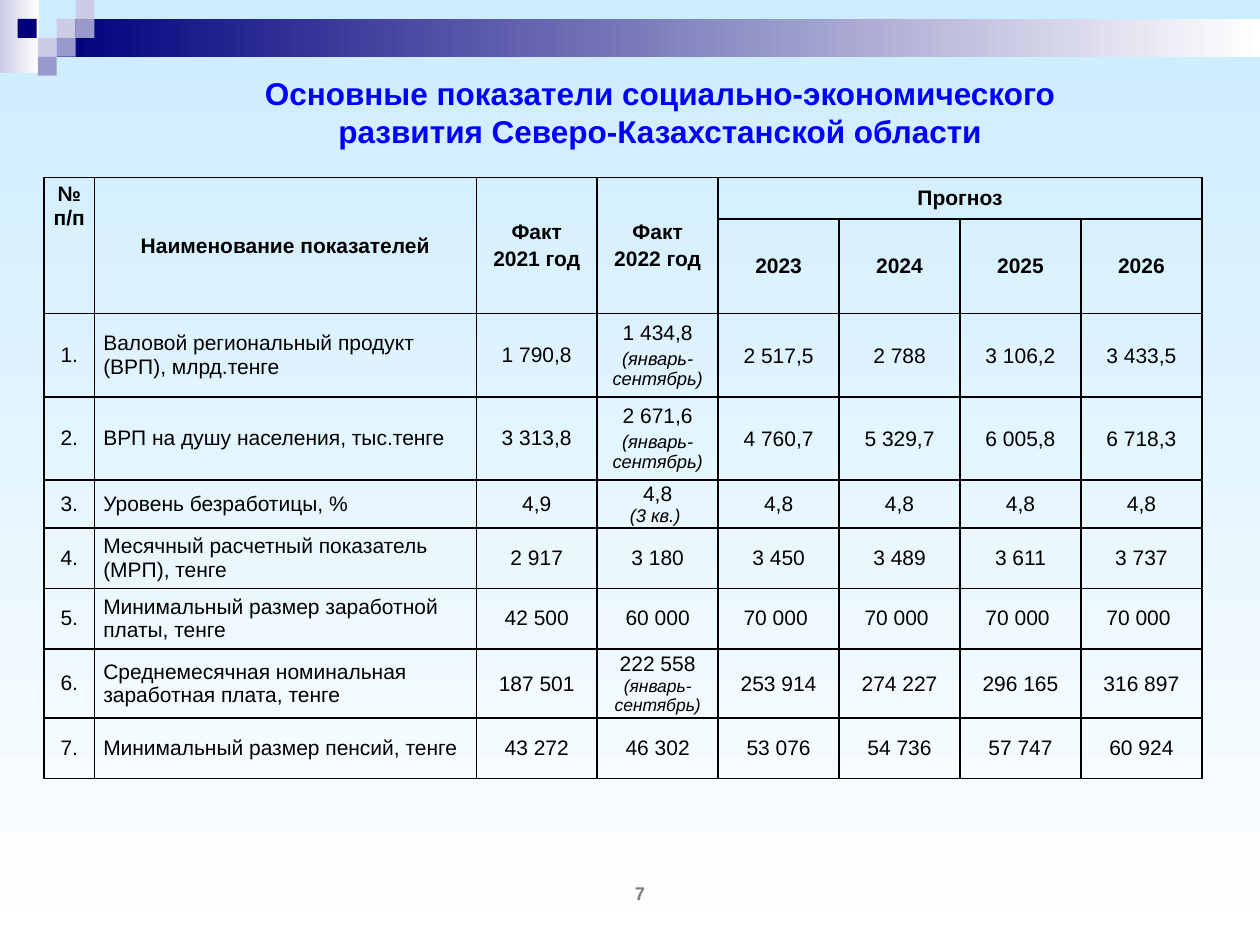
from lxml import etree
from pptx import Presentation
from pptx import util as u
from pptx.dml.color import RGBColor
from pptx.enum import shapes, text
from pptx.oxml.ns import qn

HUES = {"sky": "CCECFF", "white": "FFFFFF", "navy": "00007D", "lilac": "CCCCE6",
        "mauve": "9999CC", "blue": "0000FF", "gray": "7F7F7F", "black": "000000"}
MID = text.PP_ALIGN.CENTER
LEFT = text.PP_ALIGN.LEFT

COLS = [0.4, 3.03] + [0.96] * 6
ROWS = [0.33, 0.75, 0.66, 0.66, 0.38, 0.48, 0.48, 0.55, 0.48]

# Cell insets: left, top, right, bottom
WIDE = (0.07, 0.04, 0.07, 0.04)
TIGHT = (0.01, 0.01, 0.01, 0)
SIDE = (0.04, 0, 0.04, 0)

HEADS = ["№ п/п", "Наименование показателей", "Факт\n2021 год", "Факт\n2022 год"]
YEARS = ["2023", "2024", "2025", "2026"]

# Name, (fact 2021, fact 2022, forecasts), insets of the facts, insets of the
# forecasts, size of the remark
DATA = [
    ("Валовой региональный продукт (ВРП), млрд.тенге",
     ("1 790,8", "1 434,8\n(январь-сентябрь)", "2 517,5", "2 788", "3 106,2", "3 433,5"),
     WIDE, TIGHT, 10.5),
    ("ВРП на душу населения, тыс.тенге",
     ("3 313,8", "2 671,6\n(январь-сентябрь)", "4 760,7", "5 329,7", "6 005,8", "6 718,3"),
     WIDE, TIGHT, 10.5),
    ("Уровень безработицы, %",
     ("4,9", "4,8\n(3 кв.) ", "4,8", "4,8", "4,8", "4,8"), SIDE, SIDE, 10.5),
    ("Месячный расчетный показатель (МРП), тенге",
     ("2 917", "3 180", "3 450", "3 489", "3 611", "3 737"), WIDE, WIDE, 10.5),
    ("Минимальный размер заработной платы, тенге",
     ("42 500", "60 000", "70 000 ", "70 000 ", "70 000 ", "70 000 "), WIDE, WIDE, 10.5),
    ("Среднемесячная номинальная заработная плата, тенге",
     ("187 501", "222 558\n(январь-сентябрь)", "253 914", "274 227", "296 165", "316 897"),
     TIGHT, TIGHT, 10),
    ("Минимальный размер пенсий, тенге",
     ("43 272", "46 302", "53 076", "54 736", "57 747", "60 924"), WIDE, WIDE, 10.5),
]


def rgb(hue):
    return RGBColor.from_string(HUES[hue])


class Deck:
    font = "Arial"

    def __init__(self):
        self.prs = Presentation()
        self.prs.slide_width = u.Inches(10)
        self.prs.slide_height = u.Inches(7.5)
        self.slide = self.prs.slides.add_slide(self.prs.slide_layouts[5])

    def fade(self, fill, start, end, angle=0):
        fill.gradient()
        fill.gradient_angle = angle
        for stop, hue, pos in zip(fill.gradient_stops, (start, end), (0, 1)):
            stop.color.rgb = rgb(hue)
            stop.position = pos

    def rect(self, x, y, w, h, hue, end=None):
        """Draw a plain rectangle, faded to the hue in end if one is given."""
        box = self.slide.shapes.add_shape(
            shapes.MSO_SHAPE.RECTANGLE, *map(u.Inches, (x, y, w, h)))
        box.shadow.inherit = False
        box.line.fill.background()
        if end:
            self.fade(box.fill, hue, end)
        else:
            box.fill.solid()
            box.fill.fore_color.rgb = rgb(hue)

    def add_run(self, para, words, size, hue="black", bold=False, italic=False, align=MID):
        para.alignment = align
        run = para.add_run()
        run.text = words
        font = run.font
        font.name, font.size = self.font, u.Pt(size)
        font.bold, font.italic = bold, italic
        font.color.rgb = rgb(hue)

    def place(self, box, at, words, size, hue):
        """Move a text shape and fill it with one bold centred paragraph."""
        box.left, box.top, box.width, box.height = map(u.Inches, at)
        frame = box.text_frame
        frame.word_wrap = True
        frame.auto_size = text.MSO_AUTO_SIZE.NONE
        frame.vertical_anchor = text.MSO_ANCHOR.MIDDLE
        self.add_run(frame.paragraphs[0], words, size, hue, bold=True)

    def title(self, at, words):
        self.place(self.slide.shapes.title, at, words, 18, "blue")

    def label(self, at, words):
        self.place(self.slide.shapes.add_textbox(0, 0, 0, 0), at, words, 10.5, "gray")

    def grid(self, x, y):
        table = self.slide.shapes.add_table(
            len(ROWS), len(COLS),
            *map(u.Inches, (x, y, sum(COLS), sum(ROWS)))).table
        table.first_row = table.horz_banding = False
        for col, width in zip(table.columns, COLS):
            col.width = u.Inches(width)
        for row, height in zip(table.rows, ROWS):
            row.height = u.Inches(height)
        for cell in table.iter_cells():
            self.border(cell)
            cell.fill.background()
        return table

    def border(self, cell):
        props = cell._tc.get_or_add_tcPr()
        for side in ("a:lnL", "a:lnR", "a:lnT", "a:lnB"):
            line = etree.SubElement(props, qn(side), w=str(u.Pt(1)))
            fill = etree.SubElement(line, qn("a:solidFill"))
            etree.SubElement(fill, qn("a:srgbClr"), val=HUES["black"])

    def cell(self, cell, words, pad=WIDE, bold=False, align=MID, note=10.5):
        """Fill a cell; in a plain cell the second line is an italic remark."""
        cell.vertical_anchor = text.MSO_ANCHOR.MIDDLE
        (cell.margin_left, cell.margin_top,
         cell.margin_right, cell.margin_bottom) = map(u.Inches, pad)
        frame = cell.text_frame
        for i, line in enumerate(words.split("\n")):
            para = frame.add_paragraph() if i else frame.paragraphs[0]
            remark = i > 0 and not bold
            if pad == WIDE:
                para.space_before = u.Pt(2.4)
            self.add_run(para, line, note if remark else 12,
                         bold=bold, italic=remark, align=align)


def decor(deck):
    deck.fade(deck.slide.background.fill, "sky", "white", 270)
    deck.rect(0, 0, 0.31, 0.58, "lilac", "white")
    deck.rect(0.45, 0.15, 9.55, 0.3, "navy", "white")
    tiles = [(0.45, 0.15, "lilac"), (0.6, 0, "lilac"), (0.6, 0.15, "mauve"),
             (0.3, 0.3, "lilac"), (0.14, 0.15, "navy"), (0.45, 0.3, "mauve"),
             (0.3, 0.45, "mauve")]
    for x, y, hue in tiles:
        deck.rect(x, y, 0.15, 0.15, hue)


def stats(deck):
    table = deck.grid(0.35, 1.41)
    for c, head in enumerate(HEADS):
        table.cell(0, c).merge(table.cell(1, c))
        deck.cell(table.cell(0, c), head, bold=True)
    table.cell(0, 0).vertical_anchor = text.MSO_ANCHOR.TOP
    first = len(HEADS)
    table.cell(0, first).merge(table.cell(0, len(COLS) - 1))
    deck.cell(table.cell(0, first), "Прогноз", bold=True)
    for c, year in enumerate(YEARS, first):
        deck.cell(table.cell(1, c), year, bold=True)

    for n, (name, values, fact, plan, note) in enumerate(DATA, 1):
        deck.cell(table.cell(n + 1, 0), f"{n}.")
        deck.cell(table.cell(n + 1, 1), name, align=LEFT)
        for c, value in enumerate(values, 2):
            deck.cell(table.cell(n + 1, c), value, fact if c < first else plan, note=note)


def main():
    deck = Deck()
    decor(deck)
    deck.label((4.33, 7, 1.5, 0.18), "7")
    deck.title((1.67, 0.56, 7.14, 0.66),
               "Основные показатели социально-экономического "
               "развития Северо-Казахстанской области")
    stats(deck)
    deck.prs.save("out.pptx")


if __name__ == "__main__":
    main()
